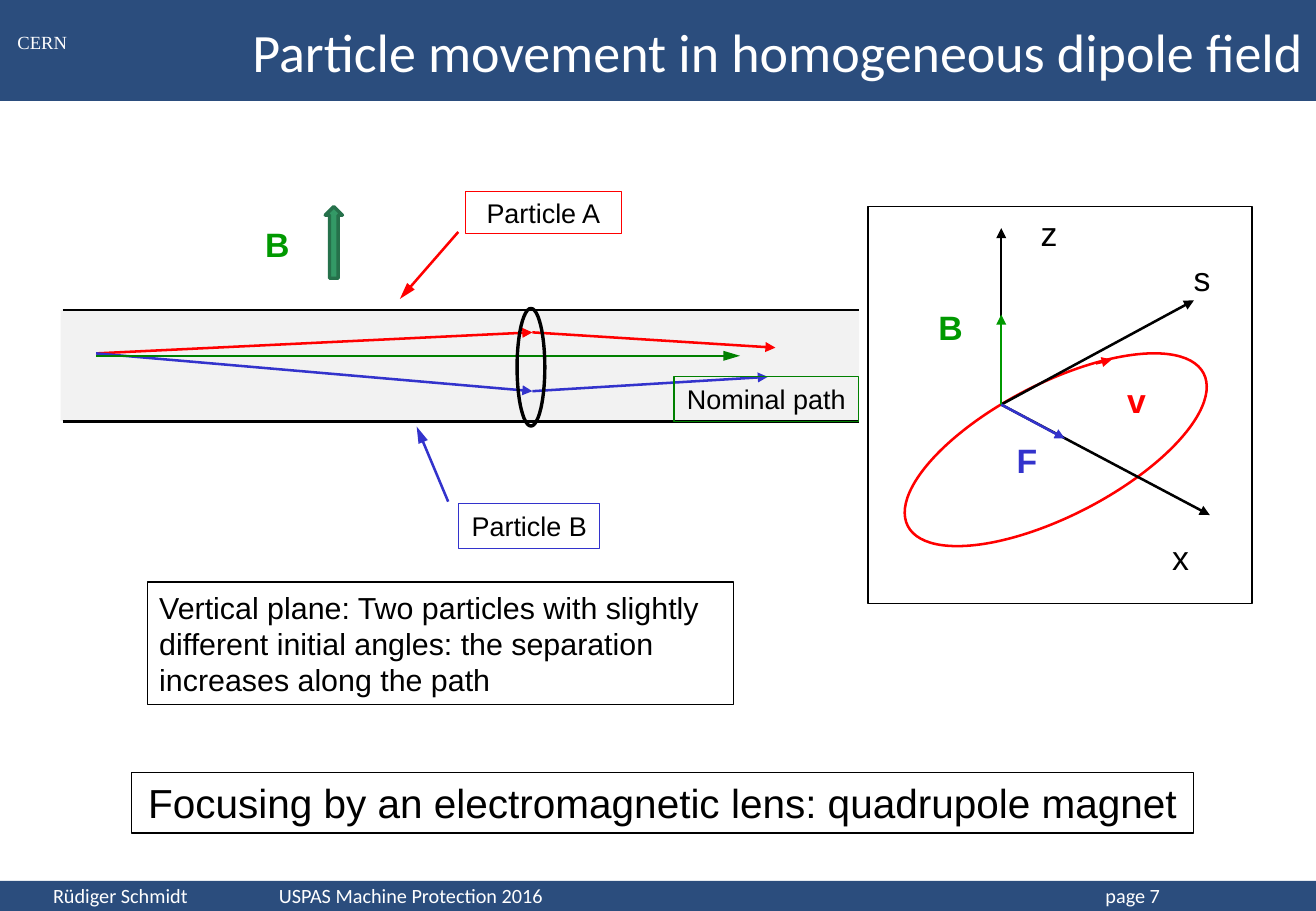
import pptx
import pptx.util
import pptx.dml.color
import pptx.enum.shapes
import pptx.enum.text
import pptx.oxml.ns
import lxml.etree

Cm = pptx.util.Cm
Pt = pptx.util.Pt
SHAPE = pptx.enum.shapes.MSO_SHAPE
ALIGN = pptx.enum.text.PP_ALIGN
ANCHOR = pptx.enum.text.MSO_ANCHOR

NAVY, WHITE, BLACK, GRAY = "062F67", "FFFFFF", "000000", "F2F2F2"
RED, BLUE, GREEN, DARK_GREEN = "FF0000", "3333CC", "009900", "008000"


def color(value):
    return pptx.dml.color.RGBColor.from_string(value)


def add_xml(parent, tag, **attrs):
    return lxml.etree.SubElement(parent, pptx.oxml.ns.qn(tag), attrs)


def place(box, x, y, w, h):
    return Cm(box[0] + x), Cm(box[1] + y), Cm(w), Cm(h)


def write(sp, text, size, align=ALIGN.CENTER, font="Arial", fill=BLACK, bold=False, wrap=True):
    tf = sp.text_frame
    for name, value in {"word_wrap": wrap, "vertical_anchor": ANCHOR.MIDDLE}.items():
        setattr(tf, name, value)
    p = tf.paragraphs[0]
    p.alignment = align
    r = p.add_run()
    r.text = text
    for name, value in {"name": font, "size": Pt(size), "bold": bold}.items():
        setattr(r.font, name, value)
    r.font.color.rgb = color(fill)


def shape(s, kind, box, rect, fill=None, line=None, width=0.75):
    sp = s.shapes.add_shape(kind, *place(box, *rect))
    sp.shadow.inherit = False
    if fill:
        sp.fill.solid()
        sp.fill.fore_color.rgb = color(fill)
    else:
        sp.fill.background()
    if line:
        sp.line.color.rgb = color(line)
        sp.line.width = Pt(width)
    else:
        sp.line.fill.background()
    return sp


def label(s, box, x, y, text, fill=BLACK, bold=False):
    sp = s.shapes.add_textbox(*place(box, x, y, 1.6, 1.12))
    write(sp, text, 20, fill=fill, bold=bold)


def line(s, box, start, end, fill, head="med"):
    points = [Cm(box[i % 2] + v) for i, v in enumerate((*start, *end))]
    c = s.shapes.add_connector(pptx.enum.shapes.MSO_CONNECTOR.STRAIGHT, *points)
    c.line.color.rgb = color(fill)
    c.line.width = Pt(1.5)
    if head:
        add_xml(c.line._get_or_add_ln(), "a:tailEnd", type="triangle", w="med", len=head)
    add_xml(c._element.spPr, "a:effectLst")


def band(s, box):
    sp = shape(s, SHAPE.RECTANGLE, box, (0, 0, *box[2:]), NAVY)
    solid = sp._element.spPr.find(pptx.oxml.ns.qn("a:solidFill"))
    add_xml(solid[0], "a:alpha", val="85000")


def header(s, box):
    band(s, box)
    sp = s.shapes.add_textbox(*place(box, -0.03, 0.51, 1.83, 0.74))
    write(sp, "CERN", 11, font="Times New Roman", fill=WHITE)
    title = s.shapes.title
    s.shapes._spTree.append(title._element)
    rect = place(box, 2.29, 0, box[2] - 2.29, box[3])
    for name, value in zip(("left", "top", "width", "height"), rect):
        setattr(title, name, value)
    write(title, "Particle movement in homogeneous dipole field", 32, ALIGN.RIGHT, "Calibri", WHITE)


def footer(s, box):
    band(s, box)
    sp = s.shapes.add_textbox(*place(box, 0, 0, *box[2:]))
    tf = sp.text_frame
    for name, value in {"margin_left": Cm(1.11), "margin_top": 0, "margin_bottom": Cm(0.04)}.items():
        setattr(tf, name, value)
    tabs = add_xml(tf.paragraphs[0]._p.get_or_add_pPr(), "a:tabLst")
    for stop in (4.72, 22):
        add_xml(tabs, "a:tab", pos=str(Cm(stop)), algn="l")
    write(sp, "Rüdiger Schmidt\tUSPAS Machine Protection 2016\tpage 7", 12, ALIGN.LEFT, "Calibri", WHITE)


def beam_tube(s, box):
    w, h = box[2:]
    shape(s, SHAPE.RECTANGLE, box, (0, 0, w, h), GRAY)
    for y in (0, h):
        line(s, box, (0.04, y), (w, y), BLACK, None)
    source, lens_a, lens_b = (0.74, 0.91), (9.86, 0.47), (9.86, 1.7)
    for start, end, fill, head in (
        (source, lens_a, RED, "med"),
        (source, lens_b, BLUE, "med"),
        ((0.74, 0.96), (14.2, 0.96), DARK_GREEN, "lg"),
        (lens_a, (14.94, 0.79), RED, "med"),
        (lens_b, (14.78, 1.4), BLUE, "med"),
        ((8.31, -1.63), (7.09, -0.23), RED, "lg"),
        ((8.1, 4.01), (7.44, 2.44), BLUE, "lg"),
    ):
        line(s, box, start, end, fill, head)
    for text, rect, fill in (
        ("Nominal path", (12.82, 1.39, 3.86, 0.94), DARK_GREEN),
        ("Particle A", (8.46, -2.48, 3.26, 0.89), RED),
        ("Particle B", (8.32, 4.05, 2.95, 0.94), BLUE),
    ):
        write(shape(s, SHAPE.RECTANGLE, box, rect, line=fill), text, 16, wrap=False)
    shape(s, SHAPE.OVAL, box, (9.54, -0.03, 0.58, 2.46), line=BLACK, width=2)
    label(s, box, 3.73, -1.93, "B", GREEN, True)
    shape(s, SHAPE.UP_ARROW, box, (5.53, -2.16, 0.36, 1.5), "339966", "26714B", 2)


def field_axes(s, box):
    shape(s, SHAPE.RECTANGLE, box, (0, 0, *box[2:]), line=BLACK, width=1)
    orbit = shape(s, SHAPE.OVAL, box, (0.44, 3.7, 6.96, 2.77), line=RED, width=1.5)
    orbit.rotation = 332.7
    origin = (2.78, 4.14)
    for start, end, fill in (
        (origin, (2.78, 0.45), BLACK),
        (origin, (7.14, 6.45), BLACK),
        (origin, (6.81, 1.96), BLACK),
        ((4.76, 3.28), (5.09, 3.2), RED),
        (origin, (2.78, 2.26), GREEN),
        (origin, (4.11, 4.85), BLUE),
    ):
        line(s, box, start, end, fill)
    for text, x, y in (("z", 2.98, 0), ("x", 5.73, 6.77), ("s", 6.18, 0.94)):
        label(s, box, x, y, text)
    for text, x, y, fill in (("v", 4.81, 3.48, RED), ("B", 0.92, 1.96, GREEN), ("F", 2.52, 4.74, BLUE)):
        label(s, box, x, y, text, fill, True)


def statement(s, box, text, size, align):
    sp = shape(s, SHAPE.RECTANGLE, box, (0, 0, *box[2:]), line=BLACK)
    write(sp, text, size, align)


def main():
    prs = pptx.Presentation()
    prs.slide_width, prs.slide_height = Cm(27.51), Cm(19.05)
    s = prs.slides.add_slide(prs.slide_layouts[5])
    header(s, (0, 0, 27.51, 2.11))
    footer(s, (0, 18.42, 27.51, 0.63))
    beam_tube(s, (1.27, 6.48, 16.69, 2.33))
    field_axes(s, (18.15, 4.32, 8.03, 8.3))
    statement(s, (3.08, 12.17, 12.26, 2.57),
              "Vertical plane: Two particles with slightly different initial angles: "
              "the separation increases along the path", 18, ALIGN.LEFT)
    statement(s, (2.75, 16.15, 22.2, 1.27),
              "Focusing by an electromagnetic lens: quadrupole magnet", 24, ALIGN.CENTER)
    prs.save("out.pptx")


if __name__ == "__main__":
    main()
